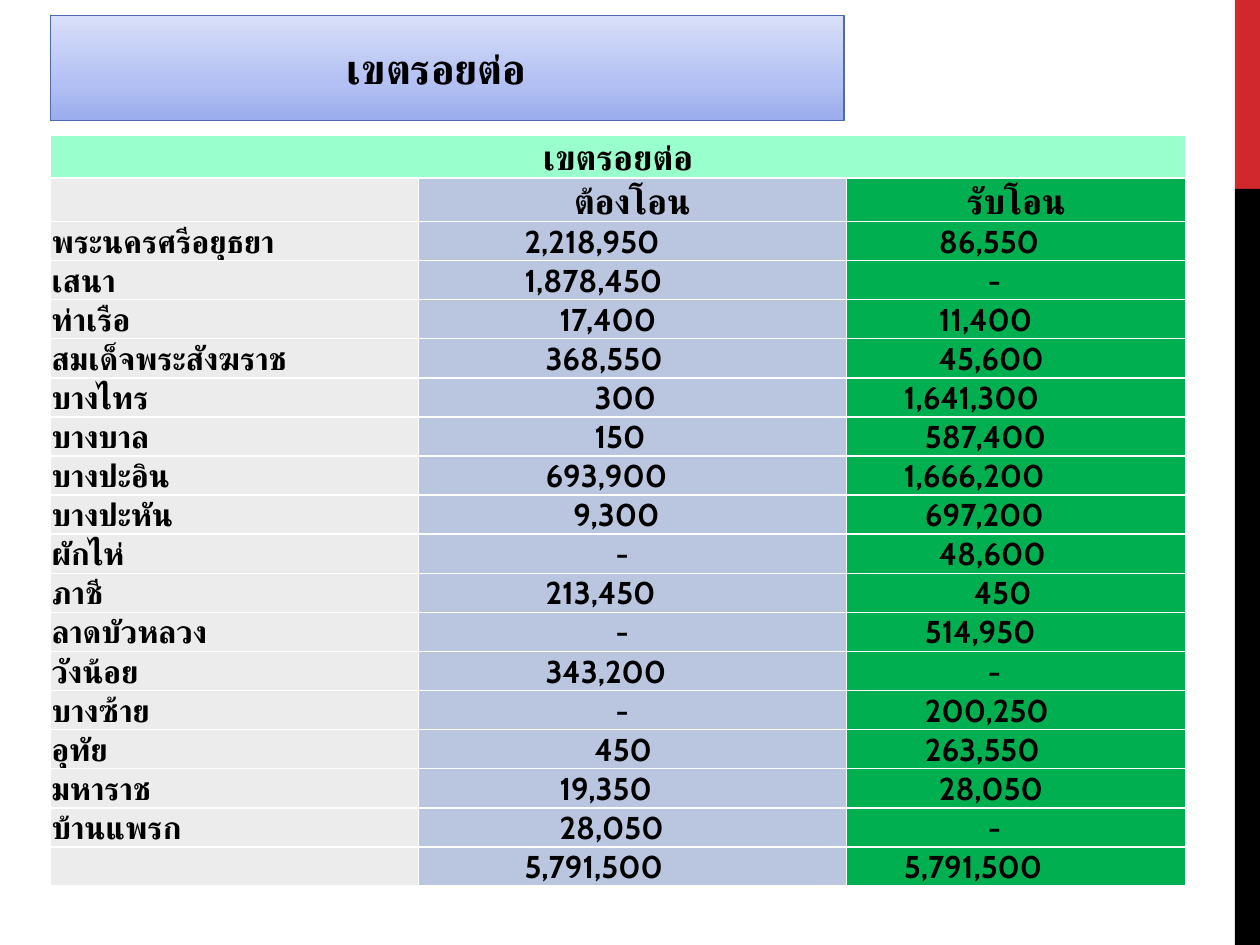
"""Build the slide of boundary-area transfers between districts."""
from copy import deepcopy

from lxml.etree import SubElement
from pptx import Presentation
from pptx.dml.color import RGBColor
from pptx.enum.shapes import MSO_SHAPE
from pptx.enum.text import MSO_ANCHOR, MSO_AUTO_SIZE, PP_ALIGN
from pptx.oxml.ns import qn
from pptx.util import Inches, Pt

BLACK = RGBColor(0x00, 0x00, 0x00)
WHITE = RGBColor(0xFF, 0xFF, 0xFF)
RED = RGBColor(0xD1, 0x28, 0x2E)
TITLE_LINE = RGBColor(0x4E, 0x6A, 0xAE)
TITLE_STOPS = [
    (0, RGBColor(0x9A, 0xAC, 0xED)),
    (0.35, RGBColor(0xB2, 0xC0, 0xF3)),
    (1, RGBColor(0xD8, 0xDF, 0xF9)),
]
MINT = RGBColor(0x99, 0xFF, 0xCC)
COLUMN_FILLS = [
    RGBColor(0xEC, 0xEC, 0xEC),
    RGBColor(0xBA, 0xC5, 0xDF),
    RGBColor(0x00, 0xB0, 0x50),
]
COLUMN_WIDTHS = [2.92, 3.4, 2.69]
INDENT_STEP = Pt(4)
INDENTS_BY_LENGTH = [
    {},
    {9: 15, 7: 18, 6: 20, 5: 22, 3: 25, 1: 28},
    {9: 8, 7: 11, 6: 13, 3: 18, 1: 20},
]
HEADINGS = ["", "ต้องโอน", "รับโอน"]
DISTRICTS = [
    ("พระนครศรีอยุธยา", "2,218,950", "86,550"),
    ("เสนา", "1,878,450", "-"),
    ("ท่าเรือ", "17,400", "11,400"),
    ("สมเด็จพระสังฆราช", "368,550", "45,600"),
    ("บางไทร", "300", "1,641,300"),
    ("บางบาล", "150", "587,400"),
    ("บางปะอิน", "693,900", "1,666,200"),
    ("บางปะหัน", "9,300", "697,200"),
    ("ผักไห่", "-", "48,600"),
    ("ภาชี", "213,450", "450"),
    ("ลาดบัวหลวง", "-", "514,950"),
    ("วังน้อย", "343,200", "-"),
    ("บางซ้าย", "-", "200,250"),
    ("อุทัย", "450", "263,550"),
    ("มหาราช", "19,350", "28,050"),
    ("บ้านแพรก", "28,050", "-"),
    ("", "5,791,500", "5,791,500"),
]


class TransferSlide:
    """Hold the style and the current slide."""

    def __init__(self, deck):
        self.width, self.height = deck.slide_width, deck.slide_height
        self.slide = deck.slides.add_slide(deck.slide_layouts[5])

    def box(self, left, top, width, height):
        """Turn shares of the slide into lengths."""
        return (int(left * self.width), int(top * self.height),
                int(width * self.width), int(height * self.height))

    def add_text(self, paragraph, text, size, font, align):
        """Add one bold run for Latin and Thai text."""
        paragraph.alignment = align
        run = paragraph.add_run()
        run.text = text
        run.font.size, run.font.bold, run.font.name = Pt(size), True, font
        run.font.color.rgb = BLACK
        SubElement(run._r.get_or_add_rPr(), qn("a:cs"), typeface=font)

    def title(self, text, *shares):
        """Place and format the title on its gradient."""
        title = self.slide.shapes.title
        title.left, title.top, title.width, title.height = self.box(*shares)
        title.fill.gradient()
        title.fill.gradient_angle = 90
        first = title.fill._xPr.find(f".//{qn('a:gs')}")
        first.addnext(deepcopy(first))
        for stop, (position, color) in zip(title.fill.gradient_stops, TITLE_STOPS):
            stop.position, stop.color.rgb = position, color
        title.line.color.rgb, title.line.width = TITLE_LINE, Pt(1)
        frame = title.text_frame
        frame.word_wrap, frame.vertical_anchor = True, MSO_ANCHOR.MIDDLE
        frame.auto_size = MSO_AUTO_SIZE.SHAPE_TO_FIT_TEXT
        frame.margin_right = Inches(0.27)
        self.add_text(frame.paragraphs[0], text, 24, "Cabin", PP_ALIGN.CENTER)

    def bar(self, color, *shares):
        """Draw a plain bar."""
        bar = self.slide.shapes.add_shape(MSO_SHAPE.RECTANGLE, *self.box(*shares))
        bar.shadow.inherit = False
        bar.fill.solid()
        bar.fill.fore_color.rgb = color
        bar.line.fill.background()

    def cell(self, cell, text, color, size=18, font="Cabin",
             align=PP_ALIGN.LEFT, indent=0):
        """Fill one table cell."""
        cell.margin_left = cell.margin_right = cell.margin_top = Inches(0.01)
        cell.margin_bottom = 0
        cell.vertical_anchor = MSO_ANCHOR.BOTTOM
        properties = cell._tc.get_or_add_tcPr()
        for side in ("lnL", "lnR", "lnT", "lnB"):
            border = SubElement(properties, qn(f"a:{side}"), w=str(Pt(1)))
            SubElement(SubElement(border, qn("a:solidFill")),
                       qn("a:srgbClr"), val=str(WHITE))
        cell.fill.solid()
        cell.fill.fore_color.rgb = color
        if text:
            paragraph = cell.text_frame.paragraphs[0]
            self.add_text(paragraph, text, size, font, align)
            paragraph._p.get_or_add_pPr().set("marL", str(indent))

    def table(self, caption, headings, rows, *shares):
        """Build the table with its caption, headings and amounts."""
        frame = self.slide.shapes.add_table(
            len(rows) + 2, len(headings), *self.box(*shares))
        table = frame.table
        table.first_row = table.horz_banding = False
        for column, width in zip(table.columns, COLUMN_WIDTHS):
            column.width = Inches(width)
        for number, row in enumerate(table.rows):
            row.height = Inches(0.34 if number < 2 else 0.31)
        heading_style = dict(size=20, font="Arial", align=PP_ALIGN.CENTER)
        table.cell(0, 0).merge(table.cell(0, len(headings) - 1))
        self.cell(table.cell(0, 0), caption, MINT, **heading_style)
        for column, color in enumerate(COLUMN_FILLS):
            self.cell(table.cell(1, column), headings[column], color, **heading_style)
            for number, row in enumerate(rows, start=2):
                text = row[column]
                steps = INDENTS_BY_LENGTH[column].get(len(text), 0)
                self.cell(table.cell(number, column), text, color,
                          indent=steps * INDENT_STEP)


def main():
    """Assemble and save the slide."""
    deck = Presentation()
    deck.slide_width, deck.slide_height = Inches(10), Inches(7.5)
    page = TransferSlide(deck)
    page.bar(RED, 0.98, 0, 0.02, 0.2)
    page.bar(BLACK, 0.98, 0.2, 0.02, 0.8)
    page.title("เขตรอยต่อ", 0.04, 0.29 / 7.5, 0.63, 0.5 / 7.5)
    page.table("เขตรอยต่อ", HEADINGS, DISTRICTS, 0.04, 1.07 / 7.5, 0.9, 0.79)
    deck.save("out.pptx")


if __name__ == "__main__":
    main()
